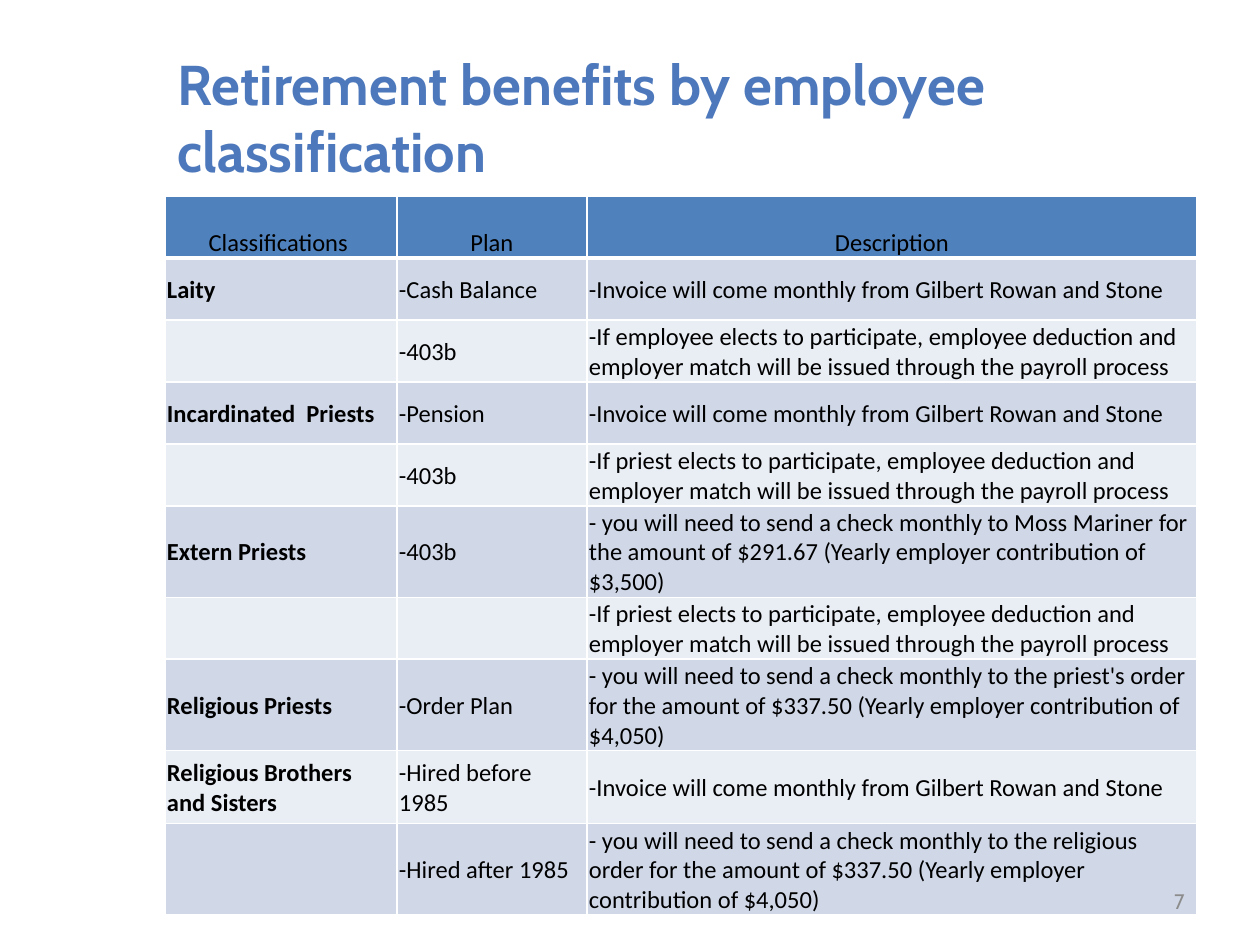
import pptx
import pptx.dml.color
import pptx.enum.text
import pptx.util
from lxml import etree
from pptx.oxml.ns import qn

PX = 914400 // 126
ALIGN = pptx.enum.text.PP_ALIGN
ANCHOR = pptx.enum.text.MSO_ANCHOR

HEADER_FILL = "4F81BD"
BAND_FILLS = ["D0D8E8", "E9EDF4"]
COLUMN_WIDTHS = [232, 190, 610]
ROW_HEIGHTS = [62] * 5 + [91, 62, 91, 73, 91]

INVOICE = "-Invoice will come monthly from Gilbert Rowan and Stone"
ELECTION = ("-If {} elects to participate, employee deduction and "
            "employer match will be issued through the payroll process")
CHECK = ("- you will need to send a check monthly to {} for the amount of {} "
         "(Yearly employer contribution of {})")
BENEFITS = [
    ("Classifications ", "Plan", "Description"),
    ("Laity", "-Cash Balance", INVOICE),
    ("", "-403b", ELECTION.format("employee")),
    ("Incardinated  Priests", "-Pension", INVOICE),
    ("", "-403b", ELECTION.format("priest")),
    ("Extern Priests", "-403b",
     CHECK.format("Moss Mariner", "$291.67", "$3,500")),
    ("", "", ELECTION.format("priest")),
    ("Religious Priests", "-Order Plan",
     CHECK.format("the priest's order", "$337.50", "$4,050")),
    ("Religious Brothers and Sisters", "-Hired before 1985", INVOICE),
    ("", "-Hired after 1985",
     CHECK.format("the religious order", "$337.50", "$4,050")),
]


def px(length):
    return pptx.util.Emu(length * PX)


def rgb(value):
    return pptx.dml.color.RGBColor.from_string(value)


def style(paragraph, name, size, color, bold=False, align=ALIGN.LEFT):
    paragraph.alignment = align
    font = paragraph.font
    font.name = name
    font.size = pptx.util.Pt(size)
    font.bold = bold
    font.color.rgb = rgb(color)


def add_title(slide, left, top, width, height):
    title = slide.shapes.title
    title.left, title.top = px(left), px(top)
    title.width, title.height = px(width), px(height)
    frame = title.text_frame
    frame.text = "Retirement benefits by employee classification"
    frame.vertical_anchor = ANCHOR.MIDDLE
    style(frame.paragraphs[0], "Cabin", 32, "4D79BC", bold=True)


def set_borders(cell, bottom_width):
    """Draw white cell borders; these must precede the fill in tcPr."""
    properties = cell._tc.get_or_add_tcPr()
    widths = {"a:lnL": 1, "a:lnR": 1, "a:lnT": 1, "a:lnB": bottom_width}
    for position, (side, width) in enumerate(widths.items()):
        line = etree.Element(qn(side), w=str(pptx.util.Pt(width)))
        fill = etree.SubElement(line, qn("a:solidFill"))
        etree.SubElement(fill, qn("a:srgbClr"), val="FFFFFF")
        properties.insert(position, line)


def fill_cell(cell, text, row, column):
    header = row == 0
    cell.margin_left = cell.margin_right = cell.margin_top = px(2)
    cell.margin_bottom = 0
    cell.vertical_anchor = ANCHOR.BOTTOM if header else ANCHOR.MIDDLE
    cell.fill.solid()
    cell.fill.fore_color.rgb = rgb(
        HEADER_FILL if header else BAND_FILLS[(row - 1) % 2])
    set_borders(cell, 3 if header else 1)
    cell.text = text
    style(cell.text_frame.paragraphs[0], "Calibri", 14, "000000",
          bold=column == 0 and not header,
          align=ALIGN.CENTER if header else ALIGN.LEFT)


def add_benefits_table(slide, left, top):
    table = slide.shapes.add_table(
        len(BENEFITS), len(COLUMN_WIDTHS), px(left), px(top),
        px(sum(COLUMN_WIDTHS)), px(sum(ROW_HEIGHTS))).table
    for column, width in zip(table.columns, COLUMN_WIDTHS):
        column.width = px(width)
    for row, height in zip(table.rows, ROW_HEIGHTS):
        row.height = px(height)
    for row, texts in enumerate(BENEFITS):
        for column, text in enumerate(texts):
            fill_cell(table.cell(row, column), text, row, column)


def add_page_number(slide, left, top, width, height):
    frame = slide.shapes.add_textbox(
        px(left), px(top), px(width), px(height)).text_frame
    frame.word_wrap = True
    frame.vertical_anchor = ANCHOR.MIDDLE
    frame.text = "7"
    style(frame.paragraphs[0], "Cabin", 12, "8C8C8C", align=ALIGN.RIGHT)


def main():
    deck = pptx.Presentation()
    deck.slide_width, deck.slide_height = px(1260), px(945)
    slide = deck.slides.add_slide(deck.slide_layouts.get_by_name("Title Only"))
    add_title(slide, 165, 38, 1032, 158)
    add_benefits_table(slide, 165, 196)
    add_page_number(slide, 903, 876, 294, 50)
    deck.save("out.pptx")


if __name__ == "__main__":
    main()
